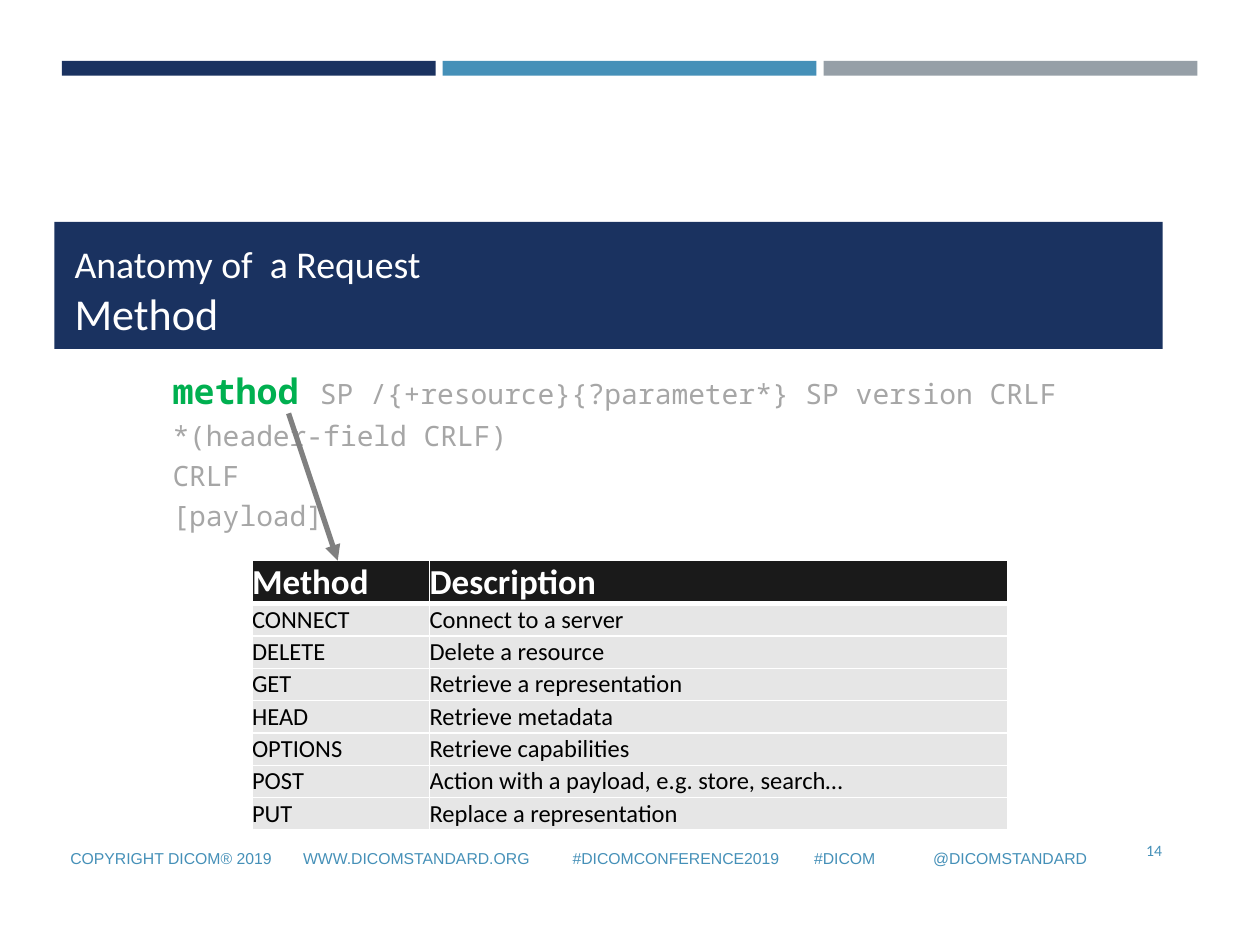
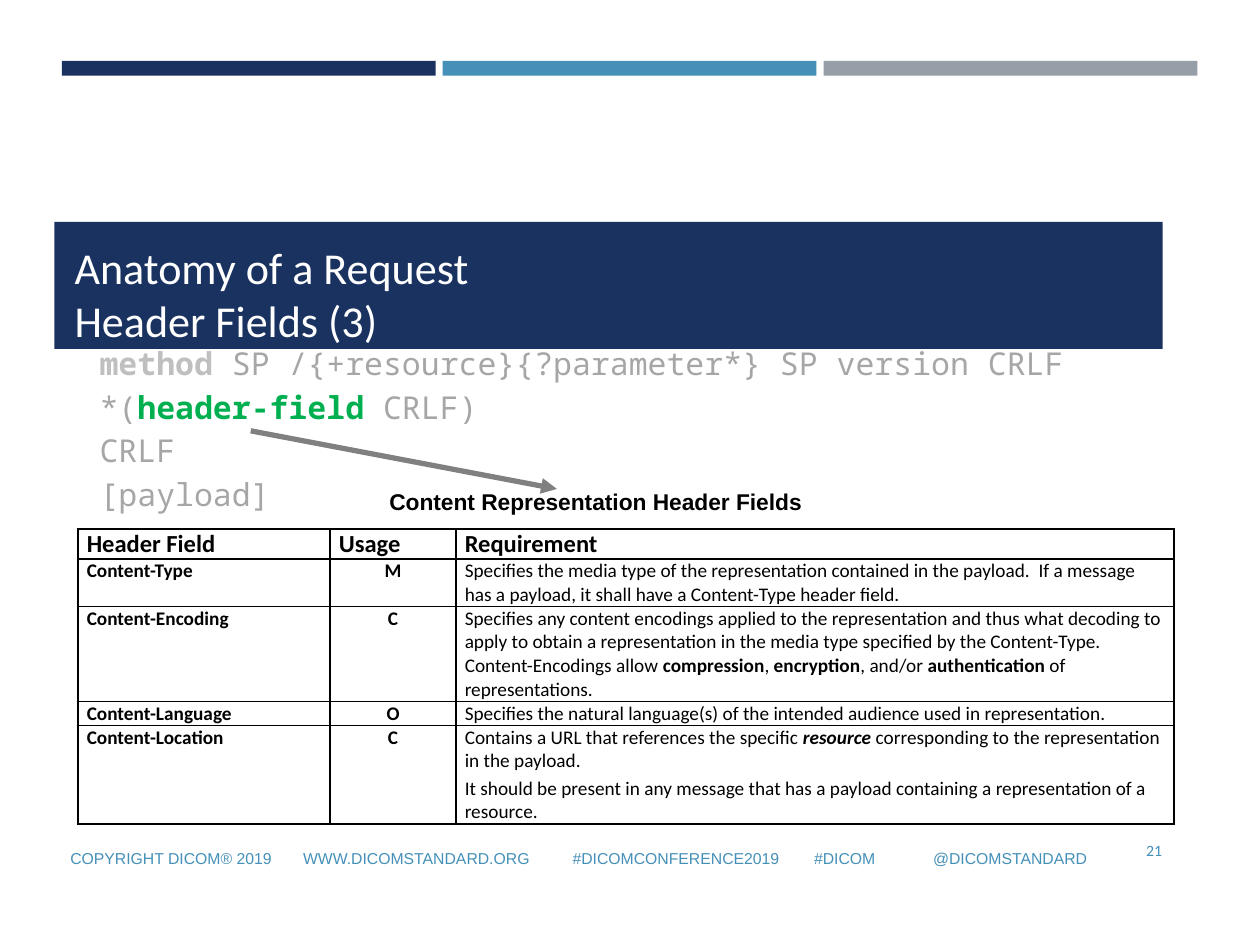
from lxml.etree import SubElement
from pptx import Presentation
from pptx.dml.color import RGBColor
from pptx.enum.shapes import MSO_CONNECTOR, MSO_SHAPE
from pptx.enum.text import MSO_ANCHOR, MSO_AUTO_SIZE, PP_ALIGN
from pptx.oxml import parse_xml
from pptx.oxml.ns import nsdecls, qn
from pptx.util import Pt

COLORS = {
    "navy": "1A3260", "blue": "4590B8", "slate": "969FA7", "white": "FFFFFF",
    "black": "000000", "header": "1A1A1A", "row": "E6E6E6", "green": "00B050",
    "dim": "A6A6A6", "dim_bold": "BFBFBF", "arrow": "808080",
}
TEXT_FONT, CODE_FONT, FOOTER_FONT = "Calibri", "Noto Sans Mono", "Arial"
FOOTER = "\t".join(["COPYRIGHT DICOM® 2019", "WWW.DICOMSTANDARD.ORG",
                    "#DICOMCONFERENCE2019", "#DICOM", "@DICOMSTANDARD"])
FOOTER_TABS = [133, 287, 425, 493]

METHODS = [
    ("CONNECT", "Connect to a server"),
    ("DELETE", "Delete a resource"),
    ("GET", "Retrieve a representation"),
    ("HEAD", "Retrieve metadata"),
    ("OPTIONS", "Retrieve capabilities"),
    ("POST", "Action with a payload, e.g. store, search…"),
    ("PUT", "Replace a representation"),
]
BOLD = {"bold": True}
HEADER_FIELDS = [
    ("Content-Type", "M", [
        "Specifies the media type of the representation contained in the payload.  "
        "If a message has a payload, it shall have a Content-Type header field."]),
    ("Content-Encoding", "C", [[
        "Specifies any content encodings applied to the representation and thus what "
        "decoding to apply to obtain a representation in the media type specified by "
        "the Content-Type. Content-Encodings allow ",
        ("compression", BOLD), ", ", ("encryption", BOLD), ", and/or ",
        ("authentication", BOLD), " of representations."]]),
    ("Content-Language", "O", [
        "Specifies the natural language(s) of the intended audience used in representation."]),
    ("Content-Location", "C", [
        ["Contains a URL that references the specific ",
         ("resource", {"bold": True, "italic": True}),
         " corresponding to the representation in the payload."],
        "It should be present in any message that has a payload containing "
        "a representation of a resource."]),
]


def rgb(name):
    return RGBColor.from_string(COLORS[name])


def add_run(p, text, font=TEXT_FONT, size=11, color="black", bold=False, italic=False):
    r = p.add_run()
    r.text = text
    r.font.name, r.font.size = font, Pt(size)
    r.font.bold, r.font.italic = bold, italic
    r.font.color.rgb = rgb(color)


def write(tf, paragraphs, align=PP_ALIGN.LEFT, gap=0, line_spacing=None, **fmt):
    """Fill a frame; a paragraph is a string or a list of strings and (text, format)."""
    for i, parts in enumerate(paragraphs):
        p = tf.paragraphs[0] if i == 0 else tf.add_paragraph()
        p.alignment, p.line_spacing = align, line_spacing
        p.space_before, p.space_after = Pt(gap if i else 0), Pt(0)
        for part in [parts] if isinstance(parts, str) else parts:
            text, own = (part, {}) if isinstance(part, str) else part
            if text == "\n":
                p.add_line_break()
            else:
                add_run(p, text, **{**fmt, **own})


def place(shape, left, top, width, height):
    shape.left, shape.top = Pt(left), Pt(top)
    shape.width, shape.height = Pt(width), Pt(height)


def add_text(s, box, text, anchor=MSO_ANCHOR.MIDDLE, **fmt):
    tf = s.shapes.add_textbox(*map(Pt, box)).text_frame
    tf.word_wrap, tf.vertical_anchor = True, anchor
    write(tf, [text], **fmt)
    return tf


def add_band(s, left, top, width, height, color):
    shape = s.shapes.add_shape(MSO_SHAPE.RECTANGLE, *map(Pt, (left, top, width, height)))
    shape.shadow.inherit = False
    shape.fill.solid()
    shape.fill.fore_color.rgb = rgb(color)
    shape.line.fill.background()
    return shape


def dress_layout(layout, s):
    """Draw the bands on slide s and move them to the layout, behind all slides."""
    for ph in list(layout.placeholders):
        if ph.placeholder_format.idx >= 10:
            ph.element.getparent().remove(ph.element)
    bands = [add_band(s, 35.4 + 217.6 * i, 34.8, 213.6, 8.4, color)
             for i, color in enumerate(["navy", "blue", "slate"])]
    bands.append(add_band(s, 31, 126.8, 633.4, 72.6, "navy"))
    for band in bands:
        layout.shapes.element.append(band.element)


def add_title(s, parts, size):
    place(s.shapes.title, 35.4, 133.9, 629.3, 65.5)
    tf = s.shapes.title.text_frame
    tf.auto_size, tf.vertical_anchor = MSO_AUTO_SIZE.NONE, MSO_ANCHOR.TOP
    write(tf, [parts], size=size, color="white")


def add_grammar(s, box, lines, size):
    """Show the request syntax in the body placeholder, without bullets."""
    body = s.placeholders[1]
    place(body, *box)
    tf = body.text_frame
    tf.auto_size, tf.vertical_anchor = MSO_AUTO_SIZE.NONE, MSO_ANCHOR.TOP
    write(tf, lines, gap=6, line_spacing=0.88, font=CODE_FONT, size=size, color="dim")
    for p in tf.paragraphs:
        pPr = p._p.get_or_add_pPr()
        pPr.set("marL", "0")
        pPr.set("indent", "0")
        SubElement(pPr, qn("a:buNone"))


def add_arrow(s, x1, y1, x2, y2):
    line = s.shapes.add_connector(MSO_CONNECTOR.STRAIGHT, *map(Pt, (x1, y1, x2, y2)))
    line.line.width = Pt(3)
    line.line.color.rgb = rgb("arrow")
    SubElement(line.line._get_or_add_ln(), qn("a:tailEnd"), type="triangle")
    SubElement(line.element.spPr, qn("a:effectLst"))


def add_grid(s, left, top, widths, heights):
    frame = s.shapes.add_table(len(heights), len(widths), Pt(left), Pt(top),
                               Pt(sum(widths)), Pt(sum(heights)))
    table = frame.table
    table.first_row = table.horz_banding = False
    for column, width in zip(table.columns, widths):
        column.width = Pt(width)
    for row, height in zip(table.rows, heights):
        row.height = Pt(height)
    return table


def set_cell(cell, paragraphs, border, fill=None, pad=0, anchor=MSO_ANCHOR.TOP,
             bottom_width=1, top_width=1, **fmt):
    cell.margin_left = cell.margin_right = Pt(pad)
    cell.margin_top = cell.margin_bottom = Pt(0)
    cell.vertical_anchor = anchor
    if fill:
        cell.fill.solid()
        cell.fill.fore_color.rgb = rgb(fill)
    else:
        cell.fill.background()
    sides = {"L": 1, "R": 1, "T": top_width, "B": bottom_width}
    for i, (side, width) in enumerate(sides.items()):
        cell._tc.get_or_add_tcPr().insert(i, parse_xml(
            f'<a:ln{side} {nsdecls("a")} w="{Pt(width)}"><a:solidFill>'
            f'<a:srgbClr val="{COLORS[border]}"/></a:solidFill></a:ln{side}>'))
    write(cell.text_frame, paragraphs, **fmt)


def add_footer(s, number):
    tf = add_text(s, (33.1, 476.6, 609.1, 28.1), FOOTER,
                  font=FOOTER_FONT, size=9, color="blue")
    tabs = SubElement(tf.paragraphs[0]._p.get_or_add_pPr(), qn("a:tabLst"))
    for pos in FOOTER_TABS:
        SubElement(tabs, qn("a:tab"), pos=str(Pt(pos)), algn="l")
    add_text(s, (640.1, 468.7, 31, 33.8), number, align=PP_ALIGN.RIGHT,
             size=9, color="blue")


def add_method_table(s):
    table = add_grid(s, 144, 320.4, [101.5, 330.5], [23] + [18.5] * len(METHODS))
    for c, text in enumerate(["Method", "Description"]):
        set_cell(table.cell(0, c), [text], "white", "header", bottom_width=3,
                 size=20, color="white", bold=True)
    for r, row in enumerate(METHODS, 1):
        for c, text in enumerate(row):
            set_cell(table.cell(r, c), [text], "white", "row", anchor=MSO_ANCHOR.MIDDLE,
                     top_width=3 if r == 1 else 1, size=14)


def add_header_field_table(s):
    table = add_grid(s, 44.6, 302.4, [144, 72, 410.4], [17, 27, 53.6, 13.6, 56])
    for c, text in enumerate(["Header Field", "Usage", "Requirement"]):
        set_cell(table.cell(0, c), [text], "black", pad=5, anchor=MSO_ANCHOR.BOTTOM,
                 size=14, bold=True)
    for r, (name, usage, requirement) in enumerate(HEADER_FIELDS, 1):
        set_cell(table.cell(r, 0), [name], "black", pad=5, bold=True)
        set_cell(table.cell(r, 1), [usage], "black", pad=5, bold=True,
                 align=PP_ALIGN.CENTER)
        set_cell(table.cell(r, 2), requirement, "black", pad=5, gap=2)


def build_method_slide(s):
    add_title(s, [("Anatomy of  a Request", {"size": 21.6}), "\n", "Method"], 25.2)
    add_grammar(s, (91.4, 210.8, 563.8, 102.2), [
        [("method ", {"size": 20, "color": "green", "bold": True}),
         "SP /{+resource}{?parameter*} SP version CRLF"],
        "*(header-field CRLF)", "CRLF", "[payload]"], 16)
    add_method_table(s)
    add_arrow(s, 164.9, 236.2, 193, 320.4)
    add_footer(s, "14")


def build_header_fields_slide(s):
    add_title(s, ["Anatomy of a Request", "\n", "Header Fields (3)"], 25.2)
    add_grammar(s, (49.7, 195.7, 576, 108), [
        [("method ", {"color": "dim_bold", "bold": True}),
         "SP /{+resource}{?parameter*} SP version CRLF"],
        ["*(", ("header-field", {"color": "green", "bold": True}), " CRLF)"],
        "CRLF", "[payload]"], 18)
    add_arrow(s, 143.3, 246.2, 318.2, 279.4)
    add_header_field_table(s)
    caption = add_text(s, (143.3, 275, 326.9, 23), "Content Representation Header Fields",
                       font=FOOTER_FONT, size=13, bold=True)
    caption.margin_left, caption.margin_right = Pt(79.2), Pt(0)
    add_footer(s, "21")


def main():
    prs = Presentation()
    prs.slide_width, prs.slide_height = Pt(720), Pt(540)
    layout = prs.slide_layouts[1]
    method, header_fields = (prs.slides.add_slide(layout) for _ in range(2))
    dress_layout(layout, method)
    build_method_slide(method)
    build_header_fields_slide(header_fields)
    prs.save("out.pptx")


if __name__ == "__main__":
    main()
